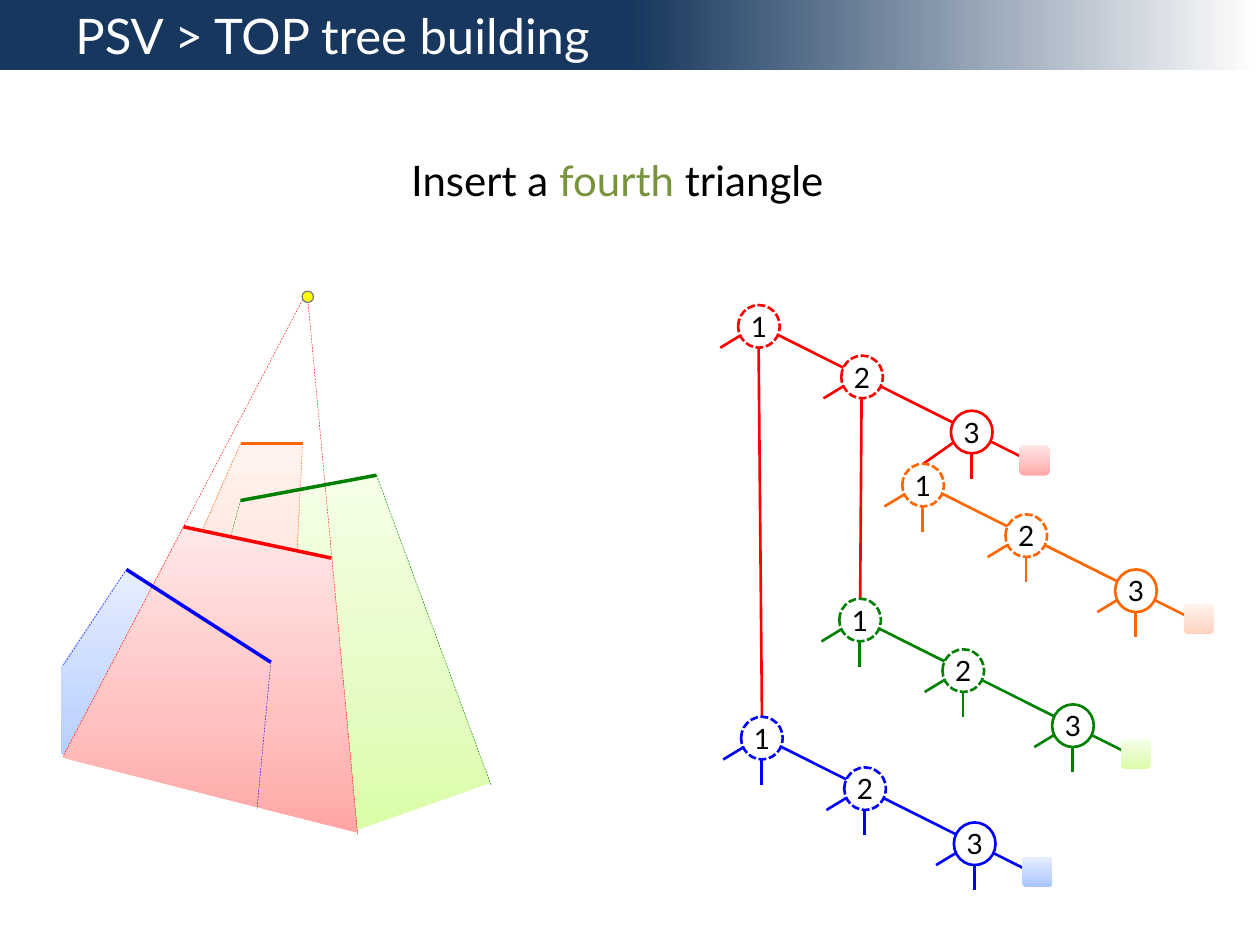
from dataclasses import dataclass
from pptx import Presentation
from pptx.dml.color import RGBColor
from pptx.enum.dml import MSO_LINE
from pptx.enum.shapes import MSO_CONNECTOR, MSO_SHAPE
from pptx.enum.text import MSO_ANCHOR, MSO_AUTO_SIZE, PP_ALIGN
from pptx.oxml.ns import qn
from pptx.util import Cm, Pt
from lxml.etree import SubElement


@dataclass(frozen=True)
class Hue:
    line: str
    ramp: tuple


def hue(line, *tints):
    return Hue(line, tuple(zip((0, 35, 100), tints)))


class Theme:
    font = "Lato"
    title_size, lead_size, node_size = 28, 24, 16
    thin, eye_line, branch, edge = 0.25, 0.75, 1.5, 2
    black, white, grey, yellow, olive = "000000", "FFFFFF", "808080", "FFFF00", "77933C"
    band = ((50, "17375E"), (100, "FFFFFF"))
    red = hue("FF0000", "FFA6A5", "FFC0BF", "FFE7E7")
    orange = hue("FF6600", "FFD2BD", "FFDED0", "FFF2ED")
    green = hue("008000", "DAFDA7", "E4FCC2", "F5FFE7")
    blue = hue("0000FF", "A4C4FF", "BFD4FF", "E6EEFF")


@dataclass(frozen=True)
class Wedge:
    """A segment, the shadow area behind it and the ends of its two boundary rays."""
    hue: Hue
    left: tuple
    right: tuple
    feet: tuple
    left_ray: tuple
    right_ray: tuple
    from_eye: bool = False


EYE = (4.95, 0)
WEDGES = (
    Wedge(Theme.green, (3.61, 4.22), (6.35, 3.71),
          ((8.64, 9.91), (5.94, 10.87), (1.9, 9.83)), (3.4, 4.98), (8.66, 9.96)),
    Wedge(Theme.orange, (3.61, 3.07), (4.86, 3.07),
          ((4.5, 10.49), (0.74, 9.55)), (2.84, 4.83), (4.75, 5.21)),
    Wedge(Theme.blue, (1.31, 5.61), (4.22, 7.48),
          ((3.94, 10.36), (0, 9.32), (0, 7.57)), (0.03, 7.55), (3.94, 10.44)),
    Wedge(Theme.red, (2.46, 4.75), (5.44, 5.38),
          ((5.97, 10.92), (0.03, 9.4)), (0.03, 9.38), (5.97, 10.95), from_eye=True),
)

NODE_W, NODE_H = 0.84, 0.86
NODES = ((0, 0), (2.08, 1.02), (4.29, 2.13))
TRUNK = ((0.46, 0.43), (5.69, 3.05))
LEAF, LEAF_SIDE = (5.67, 2.83), 0.61
STUBS = {"down": ((0.41, 0.61), (0.41, 1.37)), "left": ((0.38, 0.41), (-0.36, 0.86))}
TREES = {"red": (14.88, 6.15), "orange": (18.19, 9.35),
         "green": (16.92, 12.07), "blue": (14.94, 14.45)}
# Branches of the red tree that lead to the root of another tree
RED_LINKS = {(1, "down"): "blue", (2, "down"): "green", (3, "left"): "orange"}


def shift(origin, point):
    return origin[0] + point[0], origin[1] + point[1]


def rgb(code):
    return RGBColor.from_string(code)


def write(frame, *runs, size, align=PP_ALIGN.CENTER, anchor=MSO_ANCHOR.TOP, margin=None):
    """Fill a text frame with one paragraph of (text, colour) runs."""
    frame.word_wrap = True
    frame.auto_size = MSO_AUTO_SIZE.NONE
    frame.vertical_anchor = anchor
    if margin is not None:
        frame.margin_left = frame.margin_right = Cm(margin)
        frame.margin_top = frame.margin_bottom = 0
    paragraph = frame.paragraphs[0]
    paragraph.alignment = align
    for text, colour in runs:
        run = paragraph.add_run()
        run.text = text
        run.font.name = Theme.font
        run.font.size = Pt(size)
        run.font.color.rgb = rgb(colour)


def fill_gradient(shape, stops, angle):
    shape.fill.gradient()
    shape.fill.gradient_angle = angle
    stop_list = shape.element.spPr.find(qn("a:gradFill")).find(qn("a:gsLst"))
    for old in list(stop_list):
        stop_list.remove(old)
    for percent, colour in stops:
        stop = SubElement(stop_list, qn("a:gs"), pos=str(percent * 1000))
        SubElement(stop, qn("a:srgbClr"), val=colour)


def set_pen(line, colour, width, dash=None):
    line.color.rgb = rgb(colour)
    line.width = Pt(width)
    if dash is not None:
        line.dash_style = dash


def draw_line(slide, start, end, *pen):
    connector = slide.shapes.add_connector(
        MSO_CONNECTOR.STRAIGHT, *(Cm(v) for v in (*start, *end)))
    set_pen(connector.line, *pen)
    SubElement(connector.element.spPr, qn("a:effectLst"))


def add_preset(slide, kind, corner, width, height):
    shape = slide.shapes.add_shape(kind, *(Cm(v) for v in (*corner, width, height)))
    shape.shadow.inherit = False
    return shape


def draw_header(slide, left, top, width, height):
    title = slide.shapes.title
    title.left, title.top, title.width, title.height = map(Cm, (left, top, width, height))
    fill_gradient(title, Theme.band, 0)
    write(title.text_frame, ("PSV > TOP tree building", Theme.white), size=Theme.title_size,
          align=PP_ALIGN.LEFT, anchor=MSO_ANCHOR.MIDDLE, margin=1.52)


def draw_lead(slide, *box):
    lead = slide.shapes.add_textbox(*map(Cm, box))
    write(lead.text_frame, ("Insert a ", Theme.black), ("fourth", Theme.olive),
          (" triangle", Theme.black), size=Theme.lead_size)


def draw_view(slide, left, top):
    """Draw the eye, the segments it sees and their shadow areas."""
    def place(point):
        return shift((left, top), point)

    for wedge in WEDGES:
        start, *rest = [tuple(map(Cm, place(p)))
                        for p in (wedge.left, wedge.right, *wedge.feet)]
        builder = slide.shapes.build_freeform(*start, scale=1.0)
        builder.add_line_segments(rest, close=True)
        area = builder.convert_to_shape()
        area.shadow.inherit = False
        area.line.fill.background()
        fill_gradient(area, wedge.hue.ramp, 90)

    for wedge in reversed(WEDGES):
        for corner, ray_end in ((wedge.left, wedge.left_ray), (wedge.right, wedge.right_ray)):
            ray_start = EYE if wedge.from_eye else corner
            draw_line(slide, place(ray_start), place(ray_end),
                      wedge.hue.line, Theme.thin, MSO_LINE.DASH)
        draw_line(slide, place(wedge.left), place(wedge.right), wedge.hue.line, Theme.edge)

    eye = add_preset(slide, MSO_SHAPE.OVAL, place((EYE[0] - 0.1, 0)), 0.23, 0.23)
    eye.fill.solid()
    eye.fill.fore_color.rgb = rgb(Theme.yellow)
    set_pen(eye.line, Theme.grey, Theme.eye_line)


def draw_tree(slide, origin, colours, links):
    """Draw a chain of three nodes; links replaces a stub by a line to a tree's root."""
    pen = colours.line, Theme.branch
    draw_line(slide, *(shift(origin, p) for p in TRUNK), *pen)
    for number, offset in enumerate(NODES, 1):
        corner = shift(origin, offset)
        for side, (stub_start, stub_end) in STUBS.items():
            target = links.get((number, side))
            end = shift(TREES[target], (NODE_W / 2, 0)) if target else shift(corner, stub_end)
            draw_line(slide, shift(corner, stub_start), end, *pen)
        node = add_preset(slide, MSO_SHAPE.OVAL, corner, NODE_W, NODE_H)
        node.fill.solid()
        node.fill.fore_color.rgb = rgb(Theme.white)
        set_pen(node.line, *pen, MSO_LINE.SQUARE_DOT if number < len(NODES) else None)
        write(node.text_frame, (str(number), Theme.black), size=Theme.node_size,
              anchor=MSO_ANCHOR.MIDDLE, margin=0)
    leaf = add_preset(slide, MSO_SHAPE.ROUNDED_RECTANGLE, shift(origin, LEAF),
                      LEAF_SIDE, LEAF_SIDE)
    leaf.line.fill.background()
    fill_gradient(leaf, colours.ramp, 90)


def main():
    deck = Presentation()
    deck.slide_width, deck.slide_height = Cm(25.4), Cm(19.05)
    slide = deck.slides.add_slide(deck.slide_layouts[5])
    draw_header(slide, 0, -0.03, 25.4, 1.45)
    draw_lead(slide, 1.6, 3, 21.69, 1.27)
    draw_view(slide, 1.24, 5.87)
    for name, origin in TREES.items():
        draw_tree(slide, origin, getattr(Theme, name), RED_LINKS if name == "red" else {})
    deck.save("out.pptx")


if __name__ == "__main__":
    main()
